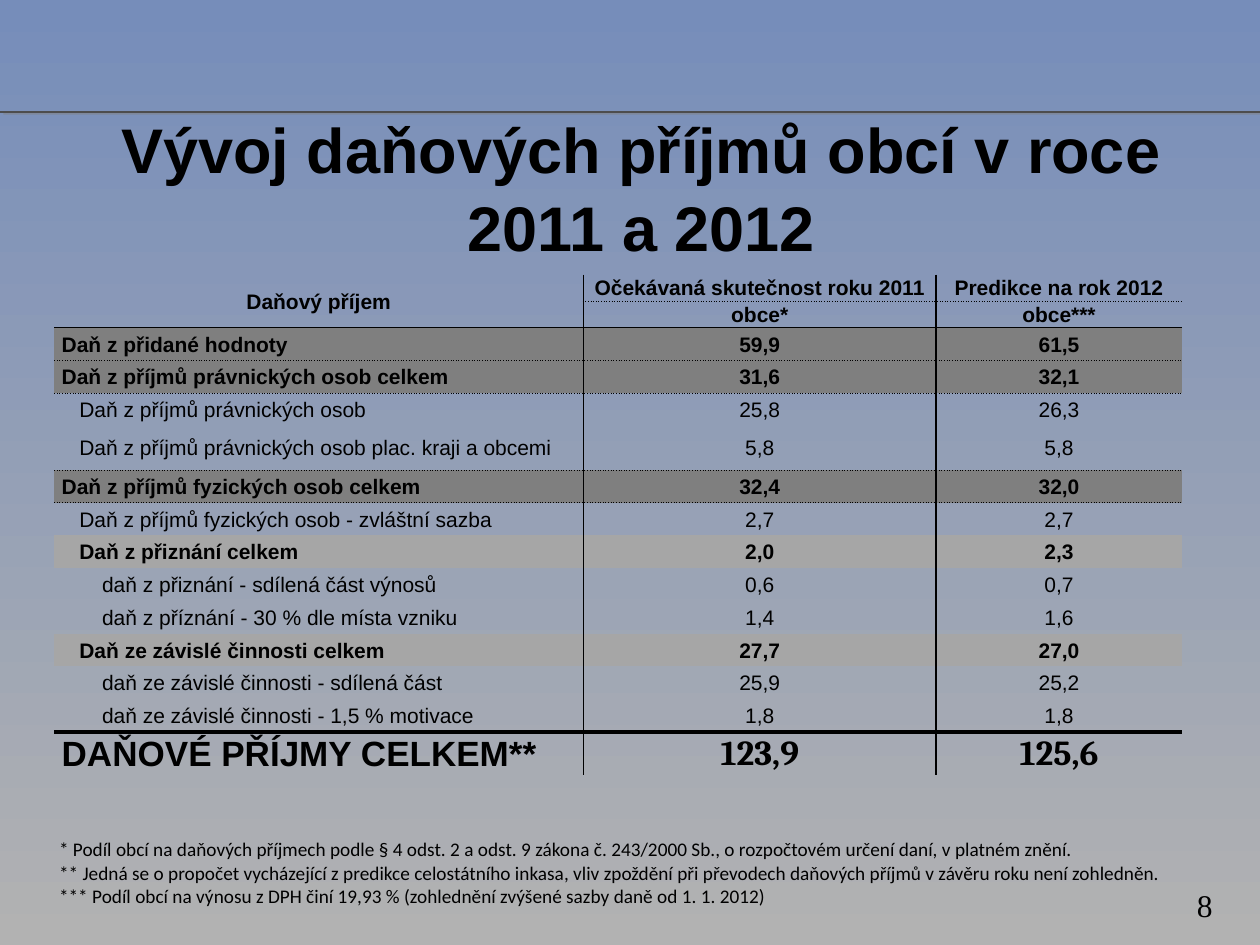
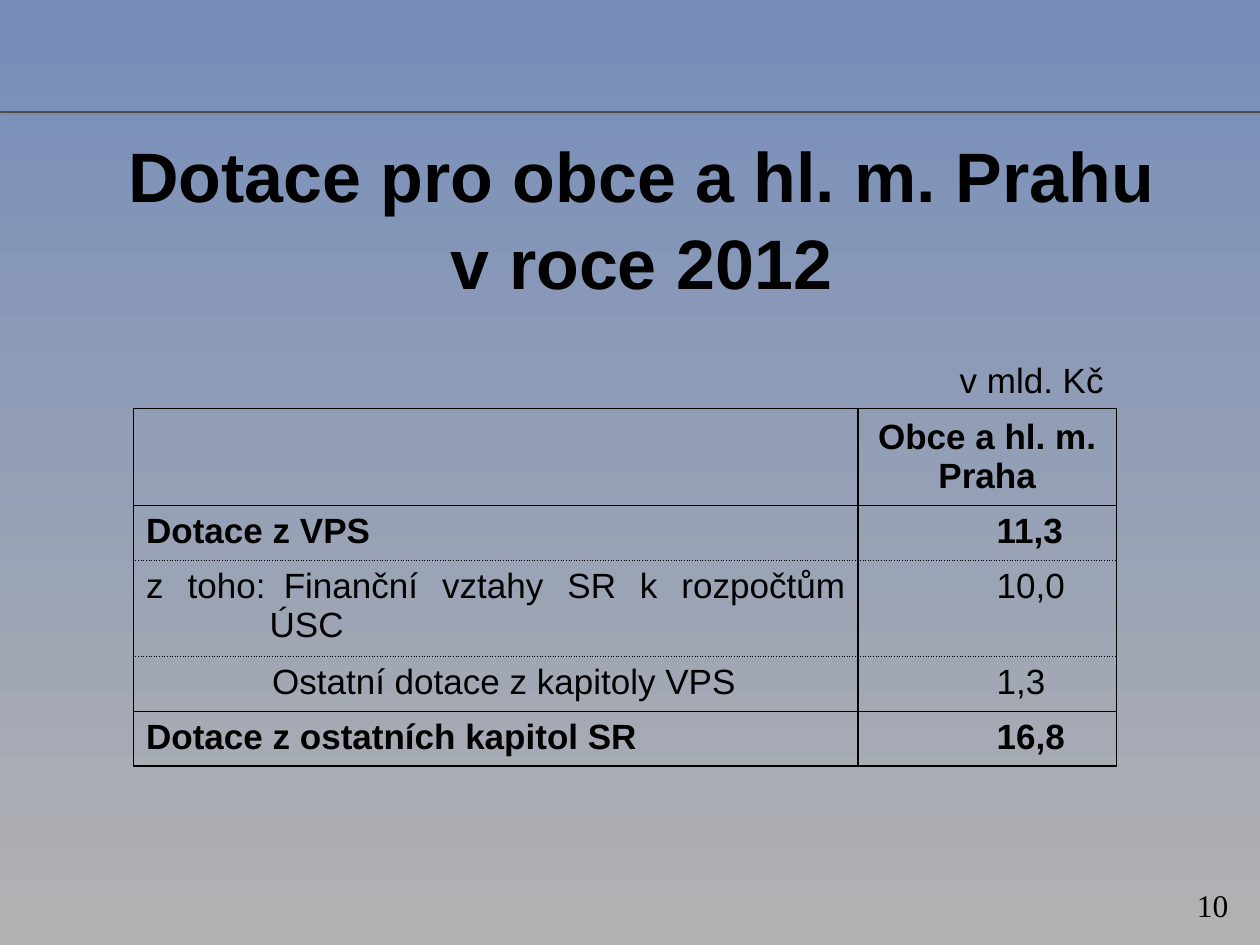
from dataclasses import dataclass

from lxml.etree import SubElement
from pptx import Presentation
from pptx.dml.color import RGBColor
from pptx.enum.shapes import MSO_CONNECTOR
from pptx.enum.text import MSO_ANCHOR, MSO_AUTO_SIZE, PP_ALIGN
from pptx.oxml import parse_xml
from pptx.oxml.ns import nsdecls, qn
from pptx.util import Inches, Pt

SKY = RGBColor(0x76, 0x8D, 0xBA)
SILVER = RGBColor(0xB2, 0xB2, 0xB2)
RULE_GREY = RGBColor(0x4D, 0x4D, 0x4D)
BLACK = RGBColor(0, 0, 0)
TOTAL_GREY = RGBColor(0x7F, 0x7F, 0x7F)
SUBTOTAL_GREY = RGBColor(0xA6, 0xA6, 0xA6)

SLIDE_WIDTH, SLIDE_HEIGHT = Inches(10), Inches(7.5)
UNIT = SLIDE_WIDTH // 100  # the slide is a grid of 100 columns by 75 rows
NO_STYLE = "{2D5ABB26-0587-4C30-8999-92F81FD0307C}"

# Borders: width in points and dash
SOLID = (1, "solid")
DOTTED = (0.5, "sysDot")
THICK = (2.25, "solid")


@dataclass
class Box:
    """A rectangle in grid units."""
    left: float
    top: float
    width: float
    height: float

    def lengths(self):
        return [round(value * UNIT)
                for value in (self.left, self.top, self.width, self.height)]


NUMBER_BOX = Box(90.2, 69.8, 9.8, 4)
RULE_TOP = 8.9

# label, 2011, 2012, indent level, bold, fill, border below
TAX_ROWS = [
    ("Daň z přidané hodnoty", "59,9", "61,5", 0, True, TOTAL_GREY, DOTTED),
    ("Daň z příjmů právnických osob celkem", "31,6", "32,1", 0, True, TOTAL_GREY, DOTTED),
    ("Daň z příjmů právnických osob", "25,8", "26,3", 1, False, None, None),
    ("Daň z příjmů právnických osob plac. kraji a obcemi", "5,8", "5,8", 1, False, None, DOTTED),
    ("Daň z příjmů fyzických osob celkem", "32,4", "32,0", 0, True, TOTAL_GREY, DOTTED),
    ("Daň z příjmů fyzických osob - zvláštní sazba", "2,7", "2,7", 1, False, None, None),
    ("Daň z přiznání celkem", "2,0", "2,3", 1, True, SUBTOTAL_GREY, None),
    ("daň z přiznání - sdílená část výnosů", "0,6", "0,7", 2, False, None, None),
    ("daň z příznání - 30 % dle místa vzniku", "1,4", "1,6", 2, False, None, None),
    ("Daň ze závislé činnosti celkem", "27,7", "27,0", 1, True, SUBTOTAL_GREY, None),
    ("daň ze závislé činnosti - sdílená část", "25,9", "25,2", 2, False, None, None),
    ("daň ze závislé činnosti - 1,5 % motivace", "1,8", "1,8", 2, False, None, THICK),
    ("DAŇOVÉ PŘÍJMY CELKEM**", "123,9", "125,6", 0, True, None, None),
]
TAX_INDENTS = (0.05, 0.19, 0.37)
TAX_MARGINS = (0.01, 0.01, 0.01, 0)

FOOTNOTES = [
    "* Podíl obcí na daňových příjmech podle § 4 odst. 2 a odst. 9 zákona č. 243/2000 Sb., "
    "o rozpočtovém určení daní, v platném znění.",
    "** Jedná se o propočet vycházející z predikce celostátního inkasa, vliv zpoždění při "
    "převodech daňových příjmů v závěru roku není zohledněn.",
    "*** Podíl obcí na výnosu z DPH činí 19,93 % (zohlednění zvýšené sazby daně od 1. 1. 2012)",
]

# label, value, bold, paragraph format of the label, border below
GRANT_ROWS = [
    ("Dotace z VPS", "11,3", True, {}, DOTTED),
    ("z toho:\tFinanční vztahy SR k rozpočtům ÚSC", "10,0", False,
     {"indent": 0.98, "hanging": 0.98, "align": PP_ALIGN.JUSTIFY}, DOTTED),
    ("Ostatní dotace z kapitoly VPS", "1,3", False, {"indent": 1}, SOLID),
    ("Dotace z ostatních kapitol SR", "16,8", True, {}, SOLID),
]


def write(paragraph, text, size=12, font="Arial", bold=False,
          align=PP_ALIGN.LEFT, indent=0, hanging=0, spacing=None):
    """Fill a paragraph; indent and hanging are in inches."""
    paragraph.text = text
    paragraph.alignment = align
    if spacing:
        paragraph.line_spacing = spacing
    properties = paragraph._p.get_or_add_pPr()
    properties.set("marL", str(Inches(indent)))
    properties.set("indent", str(-Inches(hanging)))
    for run in paragraph.runs:
        run.font.size = Pt(size)
        run.font.name = font
        run.font.bold = bold
        run.font.color.rgb = BLACK


def add_text(slide, box, lines, **text_format):
    frame = slide.shapes.add_textbox(*box.lengths()).text_frame
    frame.word_wrap = True
    for index, line in enumerate(lines):
        paragraph = frame.add_paragraph() if index else frame.paragraphs[0]
        write(paragraph, line, **text_format)


def add_rule(slide):
    top = round(RULE_TOP * UNIT)
    rule = slide.shapes.add_connector(MSO_CONNECTOR.STRAIGHT, 0, top, SLIDE_WIDTH, top)
    rule.line.color.rgb = RULE_GREY
    rule.line.width = Pt(1)
    rule._element.spPr.append(parse_xml(
        f'<a:effectLst {nsdecls("a")}>'
        f'<a:outerShdw dist="{Pt(2.2)}" dir="1620000"><a:srgbClr val="808080">'
        '<a:alpha val="50000"/></a:srgbClr></a:outerShdw></a:effectLst>'))


def add_slide(presentation, title, title_box, title_size, number):
    """Add a slide with the shared rule, page number and title."""
    slide = presentation.slides.add_slide(presentation.slide_layouts[5])
    add_rule(slide)
    add_text(slide, NUMBER_BOX, [number], size=18, font="Times New Roman", indent=0.38)
    shape = slide.shapes.title
    shape.left, shape.top, shape.width, shape.height = title_box.lengths()
    frame = shape.text_frame
    frame.auto_size = MSO_AUTO_SIZE.NONE
    frame.vertical_anchor = MSO_ANCHOR.MIDDLE
    write(frame.paragraphs[0], title, size=title_size, bold=True,
          align=PP_ALIGN.CENTER, spacing=1.04)
    return slide


def add_plain_table(slide, box, column_weights, row_weights):
    """Add a table without style whose columns and rows share the box by weight."""
    left, top, width, height = box.lengths()
    table = slide.shapes.add_table(len(row_weights), len(column_weights),
                                   left, top, width, height).table
    table.first_row = table.horz_banding = False
    table._tbl.tblPr.find(qn("a:tableStyleId")).text = NO_STYLE
    for column, weight in zip(table.columns, column_weights):
        column.width = round(width * weight / sum(column_weights))
    for row, weight in zip(table.rows, row_weights):
        row.height = round(height * weight / sum(row_weights))
    return table


def format_cell(cell, margins, anchor, fill=None, **borders):
    """Set margins (left, top, right, bottom), fill, and borders named L, R, T, B."""
    (cell.margin_left, cell.margin_top,
     cell.margin_right, cell.margin_bottom) = map(Inches, margins)
    cell.vertical_anchor = anchor
    properties = cell._tc.get_or_add_tcPr()
    for side in "LRTB":
        line = SubElement(properties, qn(f"a:ln{side}"))
        border = borders.get(side)
        if border is None:
            SubElement(line, qn("a:noFill"))
            continue
        width, dash = border
        line.set("w", str(Pt(width)))
        color = SubElement(SubElement(line, qn("a:solidFill")), qn("a:srgbClr"))
        color.set("val", str(BLACK))
        SubElement(line, qn("a:prstDash")).set("val", dash)
    if fill is None:
        cell.fill.background()
    else:
        cell.fill.solid()
        cell.fill.fore_color.rgb = fill


def add_tax_table(slide, box):
    row_weights = [21, 21] + [26] * 3 + [35] + [26] * 8 + [34]
    table = add_plain_table(slide, box, (420, 280, 195), row_weights)
    fills = [None, None] + [row[5] for row in TAX_ROWS]
    below = [DOTTED, SOLID] + [row[6] for row in TAX_ROWS]
    for row, (fill, bottom) in enumerate(zip(fills, below)):
        for column in range(3):
            first_header = row == 0 and column == 0
            second_header = row == 1 and column == 0
            format_cell(table.cell(row, column), TAX_MARGINS, MSO_ANCHOR.MIDDLE, fill,
                        L=SOLID if column else None,
                        R=SOLID if column < 2 else None,
                        T=below[row - 1] if row and not second_header else None,
                        B=SOLID if first_header else bottom)

    table.cell(0, 0).merge(table.cell(1, 0))
    headers = {(0, 0): "Daňový příjem",
               (0, 1): "Očekávaná skutečnost roku 2011", (1, 1): "obce*",
               (0, 2): "Predikce na rok 2012", (1, 2): "obce***"}
    for position, text in headers.items():
        write(table.cell(*position).text_frame.paragraphs[0], text,
              bold=True, align=PP_ALIGN.CENTER)

    for row, (label, *values, level, bold, _, _) in enumerate(TAX_ROWS, start=2):
        is_total = row == len(row_weights) - 1
        size = 20 if is_total else 12
        write(table.cell(row, 0).text_frame.paragraphs[0], label,
              size=size, bold=bold, indent=TAX_INDENTS[level])
        for column, value in enumerate(values, start=1):
            write(table.cell(row, column).text_frame.paragraphs[0], value, size=size,
                  bold=bold, font="Cambria" if is_total else "Arial",
                  align=PP_ALIGN.CENTER)


def add_grant_table(slide, box):
    table = add_plain_table(slide, box, (575, 205), (40, 75, 42, 72, 42, 42))
    below = [SOLID, SOLID] + [row[4] for row in GRANT_ROWS]
    for row, bottom in enumerate(below):
        side = SOLID if row else None
        anchor = MSO_ANCHOR.MIDDLE if row < 2 else MSO_ANCHOR.TOP
        for column in range(2):
            format_cell(table.cell(row, column), (0.1, 0.05, 0.1, 0.05), anchor,
                        L=side, R=side, T=below[row - 1] if row else None, B=bottom)

    write(table.cell(0, 1).text_frame.paragraphs[0], "v mld. Kč",
          size=20, align=PP_ALIGN.RIGHT)
    write(table.cell(1, 1).text_frame.paragraphs[0], "Obce a hl. m. Praha",
          size=20, bold=True, align=PP_ALIGN.CENTER)
    for row, (label, value, bold, label_format, _) in enumerate(GRANT_ROWS, start=2):
        write(table.cell(row, 0).text_frame.paragraphs[0], label,
              size=20, bold=bold, **label_format)
        write(table.cell(row, 1).text_frame.paragraphs[0], value,
              size=20, bold=bold, indent=1)


def set_background(presentation):
    fill = presentation.slide_master.background.fill
    fill.gradient()
    fill.gradient_angle = 270
    for stop, color, position in zip(fill.gradient_stops, (SKY, SILVER), (0, 1)):
        stop.color.rgb = color
        stop.position = position


def build_tax_slide(presentation):
    slide = add_slide(presentation, "Vývoj daňových příjmů obcí v roce 2011 a 2012",
                      Box(5.9, 9.1, 90, 11.3), 36, "8")
    add_tax_table(slide, Box(4.3, 21.8, 89.5, 39.7))
    add_text(slide, Box(3.7, 66, 92.1, 8.4), FOOTNOTES, size=11, font="Calibri")


def build_grant_slide(presentation):
    slide = add_slide(presentation, "Dotace pro obce a hl. m. Prahu\nv roce 2012",
                      Box(5.9, 11.5, 90, 11.3), 40, "10")
    add_grant_table(slide, Box(10.6, 28.1, 78, 31.3))


def main():
    presentation = Presentation()
    presentation.slide_width, presentation.slide_height = SLIDE_WIDTH, SLIDE_HEIGHT
    set_background(presentation)
    build_tax_slide(presentation)
    build_grant_slide(presentation)
    presentation.save("out.pptx")


if __name__ == "__main__":
    main()
